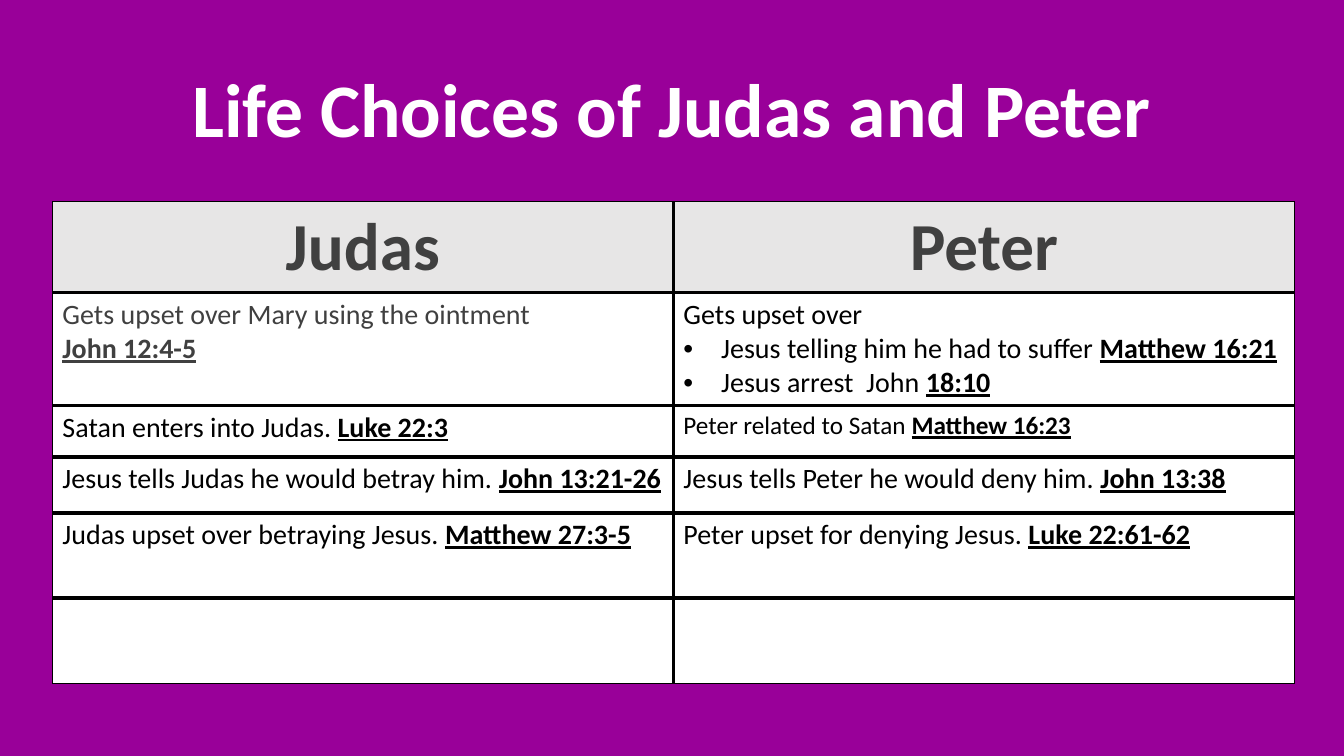
from lxml.etree import SubElement
from pptx import Presentation
from pptx.dml.color import RGBColor
from pptx.enum.text import MSO_ANCHOR, PP_ALIGN
from pptx.oxml.ns import qn
from pptx.util import Cm, Pt

BLACK, GRAY, WHITE = "000000", "404040", "FFFFFF"
PURPLE, HEADER_FILL = "990099", "E7E6E6"


def color(value):
    return RGBColor.from_string(value)


def add_span(para, text, size=20, ink=BLACK, bold=False, underline=False):
    span = para.add_run()
    span.text = text
    span.font.name = "Calibri"
    span.font.size = Pt(size)
    span.font.color.rgb = color(ink)
    span.font.bold = bold
    span.font.underline = underline


class SlideBuilder:
    """Holds the page and the table border style."""

    thin, thick = 1, 3

    def __init__(self, page):
        self.page = page

    def background(self, fill):
        self.page.background.fill.solid()
        self.page.background.fill.fore_color.rgb = color(fill)

    def title(self, text, left, top, width, height):
        box = self.page.shapes.add_textbox(Cm(left), Cm(top), Cm(width), Cm(height))
        box.text_frame.word_wrap = True
        box.text_frame.vertical_anchor = MSO_ANCHOR.MIDDLE
        para = box.text_frame.paragraphs[0]
        para.alignment = PP_ALIGN.CENTER
        para.line_spacing = 0.9
        add_span(para, text, size=54, ink=WHITE, bold=True)

    def table(self, left, top, column_width, heights, columns):
        frame = self.page.shapes.add_table(
            len(heights), columns, Cm(left), Cm(top),
            Cm(column_width * columns), Cm(sum(heights)))
        table = frame.table
        table.first_row = table.horz_banding = False
        for column in table.columns:
            column.width = Cm(column_width)
        for row, height in zip(table.rows, heights):
            row.height = Cm(height)
        # Thin lines outside, thick lines inside
        for r in range(len(heights)):
            for c in range(columns):
                cell = table.cell(r, c)
                outer = {"lnL": c == 0, "lnR": c == columns - 1,
                         "lnT": r == 0, "lnB": r == len(heights) - 1}
                for side, is_outer in outer.items():
                    self.border(cell, side, self.thin if is_outer else self.thick)
                cell.fill.solid()
                cell.fill.fore_color.rgb = color(WHITE if r else HEADER_FILL)
        return table

    def border(self, cell, side, width):
        properties = cell._tc.get_or_add_tcPr()
        line = SubElement(properties, qn(f"a:{side}"), w=str(Pt(width)))
        fill = SubElement(line, qn("a:solidFill"))
        SubElement(fill, qn("a:srgbClr"), val=BLACK)

    def header(self, cell, text):
        para = cell.text_frame.paragraphs[0]
        para.alignment = PP_ALIGN.CENTER
        add_span(para, text, size=48, ink=GRAY, bold=True)

    def entry(self, cell, lines, **style):
        """Each line is (plain text, reference, bulleted)."""
        frame = cell.text_frame
        for index, (text, reference, bulleted) in enumerate(lines):
            para = frame.add_paragraph() if index else frame.paragraphs[0]
            if bulleted:
                self.bullet(para)
            if text:
                add_span(para, text, **style)
            if reference:
                add_span(para, reference, bold=True, underline=True, **style)

    def bullet(self, para):
        properties = para._p.get_or_add_pPr()
        properties.set("marL", str(Cm(0.95)))
        properties.set("indent", str(-Cm(0.95)))
        SubElement(properties, qn("a:buFont"), typeface="Arial")
        SubElement(properties, qn("a:buChar"), char="•")


# Lines and format of every entry, row by row: Judas, Peter
ENTRIES = [
    [([("Gets upset over Mary using the ointment", "", False),
       ("", "John 12:4-5", False)], {"ink": GRAY}),
     ([("Gets upset over", "", False),
       ("Jesus telling him he had to suffer ", "Matthew 16:21", True),
       ("Jesus arrest  John ", "18:10", True)], {})],
    [([("Satan enters into Judas. ", "Luke 22:3", False)], {}),
     ([("Peter related to Satan ", "Matthew 16:23", False)], {"size": 18})],
    [([("Jesus tells Judas he would betray him. ", "John 13:21-26", False)], {}),
     ([("Jesus tells Peter he would deny him. ", "John 13:38", False)], {})],
    [([("Judas upset over betraying Jesus. ", "Matthew 27:3-5", False)], {}),
     ([("Peter upset for denying Jesus. ", "Luke 22:61-62", False)], {})],
]


def main():
    deck = Presentation()
    deck.slide_width, deck.slide_height = Cm(33.87), Cm(19.05)
    builder = SlideBuilder(deck.slides.add_slide(deck.slide_layouts[6]))

    # Background and title
    builder.background(PURPLE)
    builder.title("Life Choices of Judas and Peter", 2.33, 1.01, 29.21, 3.68)

    # Comparison table, with an empty last row
    table = builder.table(1.32, 5.08, 15.65, [2.29, 2.85, 1.3, 1.4, 2.15, 2.15], 2)
    for c, name in enumerate(["Judas", "Peter"]):
        builder.header(table.cell(0, c), name)
    for r, row in enumerate(ENTRIES, start=1):
        for c, (lines, style) in enumerate(row):
            builder.entry(table.cell(r, c), lines, **style)

    deck.save("out.pptx")


if __name__ == "__main__":
    main()
